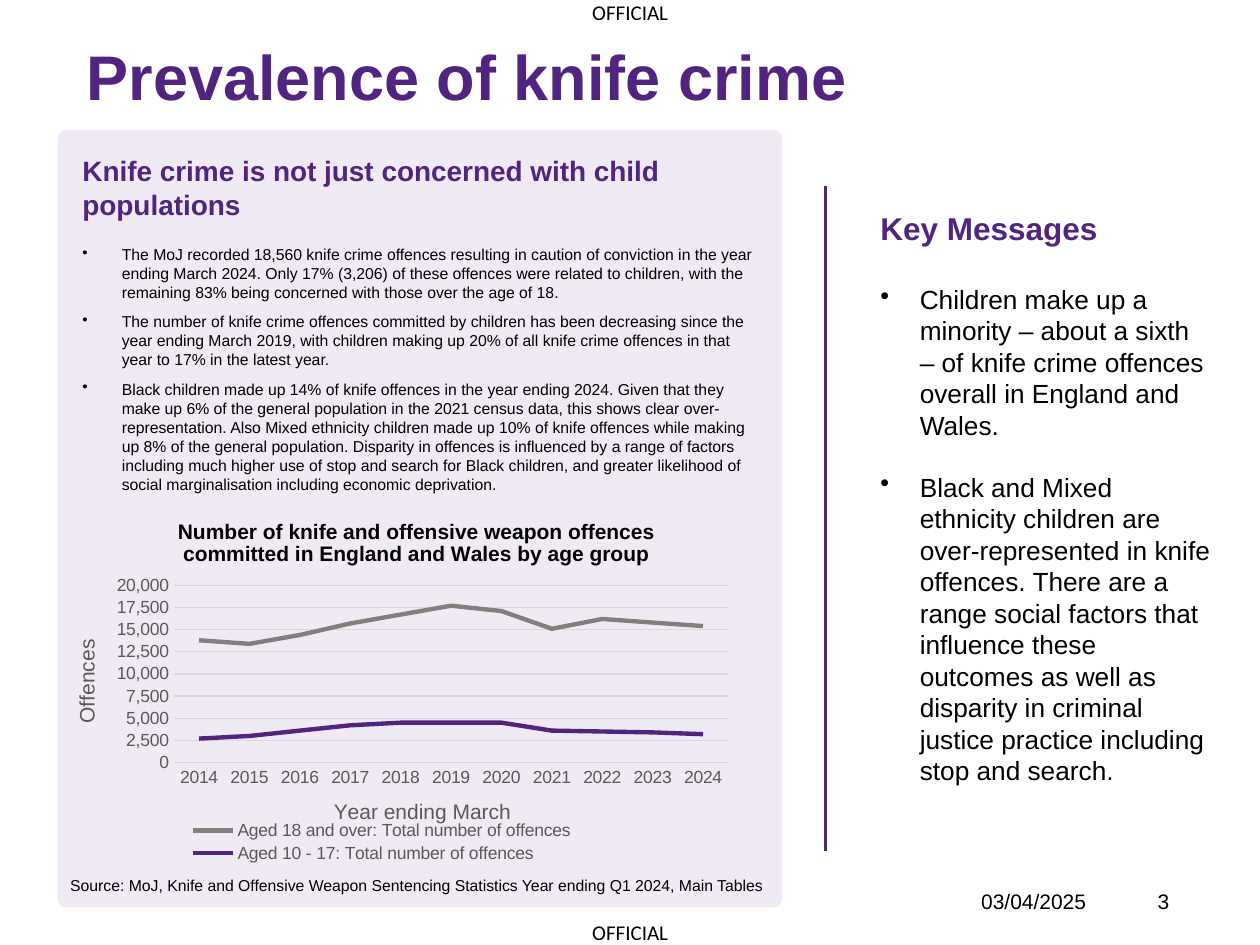
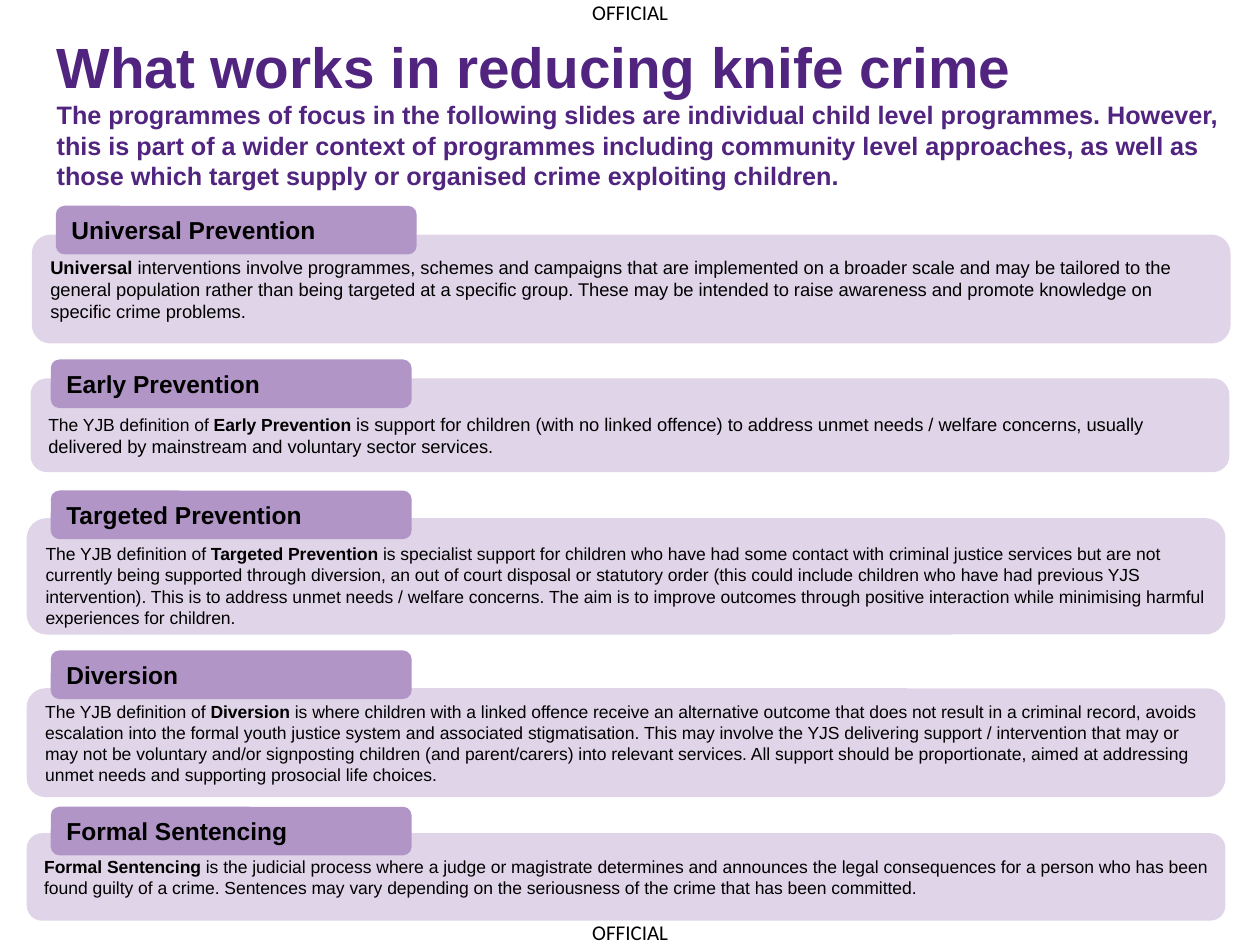
"""Builds two slides on knife crime: its prevalence and what works in reducing it."""
from dataclasses import dataclass

from lxml import etree
from pptx import Presentation
from pptx.chart.data import CategoryChartData
from pptx.dml.color import RGBColor
from pptx.enum.chart import XL_CHART_TYPE, XL_LEGEND_POSITION, XL_TICK_MARK
from pptx.enum.shapes import MSO_CONNECTOR, MSO_SHAPE
from pptx.enum.text import MSO_ANCHOR, PP_ALIGN
from pptx.oxml import parse_xml
from pptx.oxml.ns import nsdecls, qn
from pptx.util import Pt

ROUNDED = MSO_SHAPE.ROUNDED_RECTANGLE
STRAIGHT = MSO_CONNECTOR.STRAIGHT
LINE_CHART = XL_CHART_TYPE.LINE
LEGEND_RIGHT = XL_LEGEND_POSITION.RIGHT
NO_TICK = XL_TICK_MARK.NONE
TOP, MIDDLE = MSO_ANCHOR.TOP, MSO_ANCHOR.MIDDLE
LEFT, RIGHT = PP_ALIGN.LEFT, PP_ALIGN.RIGHT


@dataclass(frozen=True)
class Theme:
    """Colours, fonts and type sizes."""
    purple: str = "512480"
    tab: str = "B195C6"
    band: str = "E0D5E8"
    pale: str = "EFEAF4"
    black: str = "000000"
    grey: str = "808080"
    label: str = "595959"
    grid: str = "D9D9D9"
    font: str = "Arial"
    marking_font: str = "Calibri"
    title: float = 36
    long_title: float = 32.4
    lead: float = 14.4
    side_heading: float = 18
    heading: float = 16
    message: float = 15
    tab_label: float = 14
    small: float = 12
    large_body: float = 10.5
    body: float = 10
    note: float = 9


@dataclass
class Para:
    """A paragraph: runs are (text, bold, size) or one plain string."""
    runs: object
    size: float
    color: str = Theme.black
    bold: bool = False
    after: float = 0
    bullet: bool = False


def rgb(value):
    """Turn a hex string into a colour."""
    return RGBColor.from_string(value)


class Deck:
    """Holds the theme and the current slide, and draws each kind of element."""

    def __init__(self, prs, theme):
        self.prs, self.theme, self.s = prs, theme, None

    def slide(self):
        """Start a slide with its protective markings."""
        t = self.theme
        self.s = self.prs.slides.add_slide(self.prs.slide_layouts[6])
        for y in (0, 525.6):
            self.text((338.4, y, 48, 14.4), [Para("OFFICIAL", t.small)],
                      inset=0, font=t.marking_font)

    def style(self, font, size, color, bold=False, name=None):
        """Set size, colour, weight and face of a font."""
        font.name = name or self.theme.font
        font.size, font.bold = Pt(size), bold
        font.color.rgb = rgb(color)

    def paragraphs(self, shape, paras, anchor=TOP, align=LEFT, font=None):
        """Fill a shape with paragraphs."""
        tf = shape.text_frame
        tf.word_wrap, tf.vertical_anchor = True, anchor
        for i, para in enumerate(paras):
            p = tf.paragraphs[0] if i == 0 else tf.add_paragraph()
            p.alignment, p.space_after = align, Pt(para.after)
            self.style(p.font, para.size, para.color, para.bold, font)
            if para.bullet:
                ppr = p._p.get_or_add_pPr()
                ppr.set("marL", str(Pt(22.5)))
                ppr.set("indent", str(-Pt(22.5)))
                bullet = parse_xml(f'<a:buChar {nsdecls("a")} char="•"/>')
                ppr.find(qn("a:defRPr")).addprevious(bullet)
            if isinstance(para.runs, str):
                p.add_run().text = para.runs
                continue
            for text, bold, size in para.runs:
                r = p.add_run()
                r.text, r.font.bold, r.font.size = text, bold, Pt(size)

    def text(self, box, paras, inset=None, **options):
        """Add a text box."""
        tb = self.s.shapes.add_textbox(*map(Pt, box))
        tf = tb.text_frame
        if inset is not None:
            tf.margin_left = tf.margin_right = Pt(inset)
            tf.margin_top = tf.margin_bottom = Pt(inset)
        self.paragraphs(tb, paras, **options)

    def title(self, box, *paras):
        """Add the slide title."""
        self.text(box, paras, inset=0)

    def panel(self, box, fill, paras=(), radius=None, outline=True, top=3.6):
        """Add a rounded panel."""
        sp = self.s.shapes.add_shape(ROUNDED, *map(Pt, box))
        sp.shadow.inherit = False
        sp.fill.solid()
        sp.fill.fore_color.rgb = rgb(fill)
        if outline:
            sp.line.color.rgb, sp.line.width = rgb(fill), Pt(1)
        else:
            sp.line.fill.background()
        if radius is not None:
            sp.adjustments[0] = radius
        sp.text_frame.margin_top = Pt(top)
        self.paragraphs(sp, paras, MIDDLE)

    def rule(self, x, top, bottom):
        """Add a vertical rule."""
        line = self.s.shapes.add_connector(STRAIGHT, Pt(x), Pt(top), Pt(x), Pt(bottom))
        line.line.color.rgb, line.line.width = rgb(self.theme.purple), Pt(1.5)
        etree.SubElement(line._element.spPr, qn("a:effectLst"))

    def chart_label(self, owner, text, size, color, bold=False):
        """Set the title of a chart or of an axis."""
        tf = owner.text_frame
        tf.text = text
        p = tf.paragraphs[0]
        self.style(p.font, size, color, bold)
        self.style(p.runs[0].font, size, color, bold)
        return tf

    def axis(self, axis, title):
        """Style an axis and its title."""
        t = self.theme
        axis.major_tick_mark = axis.minor_tick_mark = NO_TICK
        self.style(axis.tick_labels.font, t.body, t.label)
        return self.chart_label(axis.axis_title, title, t.small, t.label)

    def layout(self, element, x, y, w, h, inner=False):
        """Place a chart part by fractions of the chart area."""
        for old in element.findall(qn("c:layout")):
            element.remove(old)
        parts = [("layoutTarget", "inner")] if inner else []
        parts += [("xMode", "edge"), ("yMode", "edge"),
                  ("x", x), ("y", y), ("w", w), ("h", h)]
        body = "".join(f'<c:{tag} val="{val}"/>' for tag, val in parts)
        node = parse_xml(f'<c:layout {nsdecls("c")}><c:manualLayout>{body}'
                         '</c:manualLayout></c:layout>')
        if inner:
            element.insert(0, node)
        else:
            element.find(qn("c:legendPos")).addnext(node)

    def line_chart(self, box, title, cats, series, x_title, y_title):
        """Add a line chart; series rows are (name, colour, values)."""
        t = self.theme
        data = CategoryChartData(number_format="#,##0")
        data.categories = cats
        for name, _, values in series:
            data.add_series(name, values)
        chart = self.s.shapes.add_chart(LINE_CHART, *map(Pt, box), data).chart
        self.style(chart.font, t.body, t.black)
        self.chart_label(chart.chart_title, title, t.small, t.black, True)
        chart.chart_title.include_in_layout = False
        chart.plots[0].vary_by_categories = False
        for line, (_, color, _) in zip(chart.plots[0].series, series):
            line.smooth = False
            line.format.line.color.rgb = rgb(color)
            line.format.line.width = Pt(2.5)

        x_axis, y_axis = chart.category_axis, chart.value_axis
        self.axis(x_axis, x_title)
        body = self.axis(y_axis, y_title)._txBody.bodyPr
        body.set("rot", "-5400000")
        body.set("vert", "horz")
        y_axis.minimum_scale, y_axis.maximum_scale = 0, 20000
        y_axis.major_unit = 2500
        y_axis.tick_labels.number_format = "#,##0"
        y_axis.tick_labels.number_format_is_linked = False
        y_axis.format.line.fill.background()
        for line in (x_axis.format.line, y_axis.major_gridlines.format.line):
            line.color.rgb, line.width = rgb(t.grid), Pt(0.75)

        chart.has_legend = True
        legend = chart.legend
        legend.position, legend.include_in_layout = LEGEND_RIGHT, False
        self.style(legend.font, t.body, t.label)
        self.layout(legend._element, 0.15, 0.86, 0.6, 0.13)
        self.layout(chart._chartSpace.chart.plotArea, 0.15, 0.23, 0.8, 0.48, inner=True)


def prevalence(deck):
    """Draw the slide on how common knife crime is."""
    t = deck.theme
    deck.slide()
    deck.title((49.7, 21.6, 620, 85), Para("Prevalence of knife crime", t.title, t.purple, True))
    for box, value in (((646.6, 507.6, 21.6, 14.4), "3"),
                       ((535.7, 507.6, 85, 14.4), "03/04/2025")):
        deck.text(box, [Para(value, t.small)], inset=0, anchor=MIDDLE, align=RIGHT)
    deck.rule(471.6, 106.5, 486)

    messages = [
        "Children make up a minority – about a sixth – of knife crime offences overall in "
        "England and Wales.",
        "Black and Mixed ethnicity children are over-represented in knife offences. There are a "
        "range social factors that influence these outcomes as well as disparity in criminal "
        "justice practice including stop and search.",
    ]
    deck.text((496, 116, 203, 403),
              [Para("Key Messages", t.side_heading, t.purple, True, 20.7)]
              + [Para(m, t.message, after=17.25, bullet=True) for m in messages])

    facts = [
        "The MoJ recorded 18,560 knife crime offences resulting in caution of conviction in the "
        "year ending March 2024. Only 17% (3,206) of these offences were related to children, "
        "with the remaining 83% being concerned with those over the age of 18.",
        "The number of knife crime offences committed by children has been decreasing since the "
        "year ending March 2019, with children making up 20% of all knife crime offences in that "
        "year to 17% in the latest year.",
        "Black children made up 14% of knife offences in the year ending 2024. Given that they "
        "make up 6% of the general population in the 2021 census data, this shows clear "
        "over-representation. Also Mixed ethnicity children made up 10% of knife offences while "
        "making up 8% of the general population. Disparity in offences is influenced by a range "
        "of factors including much higher use of stop and search for Black children, and greater "
        "likelihood of social marginalisation including economic deprivation.",
    ]
    deck.panel((33, 74.2, 414, 444.2), t.pale, radius=0.012, outline=False)
    deck.text((40, 84.2, 396.7, 204),
              [Para("Knife crime is not just concerned with child populations",
                    t.heading, t.purple, True, 13.8)]
              + [Para(f, t.note, after=6, bullet=True) for f in facts])
    deck.line_chart(
        (40, 286, 396, 211),
        "Number of knife and offensive weapon offences committed in England and Wales by age group",
        [str(year) for year in range(2014, 2025)],
        [("Aged 18 and over: Total number of offences", t.grey,
          (13800, 13400, 14400, 15700, 16700, 17700, 17100, 15100, 16200, 15800, 15400)),
         ("Aged 10 - 17: Total number of offences", t.purple,
          (2700, 3000, 3600, 4200, 4500, 4500, 4500, 3600, 3500, 3400, 3200))],
        "Year ending March", "Offences")
    deck.text((33, 496.8, 414, 18),
              [Para("Source: MoJ, Knife and Offensive Weapon Sentencing Statistics Year ending "
                    "Q1 2024, Main Tables", t.note)])


def what_works(deck):
    """Draw the slide on the levels of prevention."""
    t = deck.theme
    deck.slide()
    deck.title(
        (32.4, 18, 671, 85),
        Para("What works in reducing knife crime", t.long_title, t.purple, True),
        Para("The programmes of focus in the following slides are individual child level "
             "programmes. However, this is part of a wider context of programmes including "
             "community level approaches, as well as those which target supply or organised "
             "crime exploiting children.", t.lead, t.purple, True))
    yjb = "The YJB definition of "
    levels = [
        ("Universal Prevention", (32.4, 118.1), (18.7, 134.6, 61.2), 3.6, "", "Universal ",
         "interventions involve programmes, schemes and campaigns that are implemented on a "
         "broader scale and may be tailored to the general population rather than being targeted "
         "at a specific group. These may be intended to raise awareness and promote knowledge on "
         "specific crime problems.", t.large_body),
        ("Early Prevention", (29.5, 205.9), (18, 216.7, 52.6), 15, yjb, "Early Prevention ",
         "is support for children (with no linked offence) to address unmet needs / welfare "
         "concerns, usually delivered by mainstream and voluntary sector services.", t.large_body),
        ("Targeted Prevention", (29.5, 280.8), (15.8, 296.6, 65.5), 14, yjb,
         "Targeted Prevention ",
         "is specialist support for children who have had some contact with criminal justice "
         "services but are not currently being supported through diversion, an out of court "
         "disposal or statutory order (this could include children who have had previous YJS "
         "intervention). This is to address unmet needs / welfare concerns. The aim is to improve "
         "outcomes through positive interaction while minimising harmful experiences for "
         "children.", t.body),
        ("Diversion", (29.5, 372.2), (15.8, 393.8, 61.2), 3.6, yjb, "Diversion ",
         "is where children with a linked offence receive an alternative outcome that does not "
         "result in a criminal record, avoids escalation into the formal youth justice system and "
         "associated stigmatisation. This may involve the YJS delivering support / intervention "
         "that may or may not be voluntary and/or signposting children (and parent/carers) into "
         "relevant services. All support should be proportionate, aimed at addressing unmet needs "
         "and supporting prosocial life choices.", t.body),
        ("Formal Sentencing", (29.5, 461.5), (15.8, 476.6, 49), 3.6, "", "Formal Sentencing ",
         "is the judicial process where a judge or magistrate determines and announces the legal "
         "consequences for a person who has been found guilty of a crime. Sentences may vary "
         "depending on the seriousness of the crime that has been committed.", t.body),
    ]
    for name, tab, (x, y, h), top, opening, term, rest, size in levels:
        term_size = t.body if opening else size
        runs = [(opening, False, t.body)] if opening else []
        runs += [(term, True, term_size), (rest, False, size)]
        deck.panel((x, y, 684, h), t.band, [Para(runs, size)], top=top)
        deck.panel((*tab, 205.2, 26.8), t.tab, [Para(name, t.tab_label, bold=True)])


def main():
    """Build and save the slides."""
    prs = Presentation()
    prs.slide_width, prs.slide_height = Pt(720), Pt(540)
    deck = Deck(prs, Theme())
    prevalence(deck)
    what_works(deck)
    prs.save("out.pptx")


if __name__ == "__main__":
    main()
